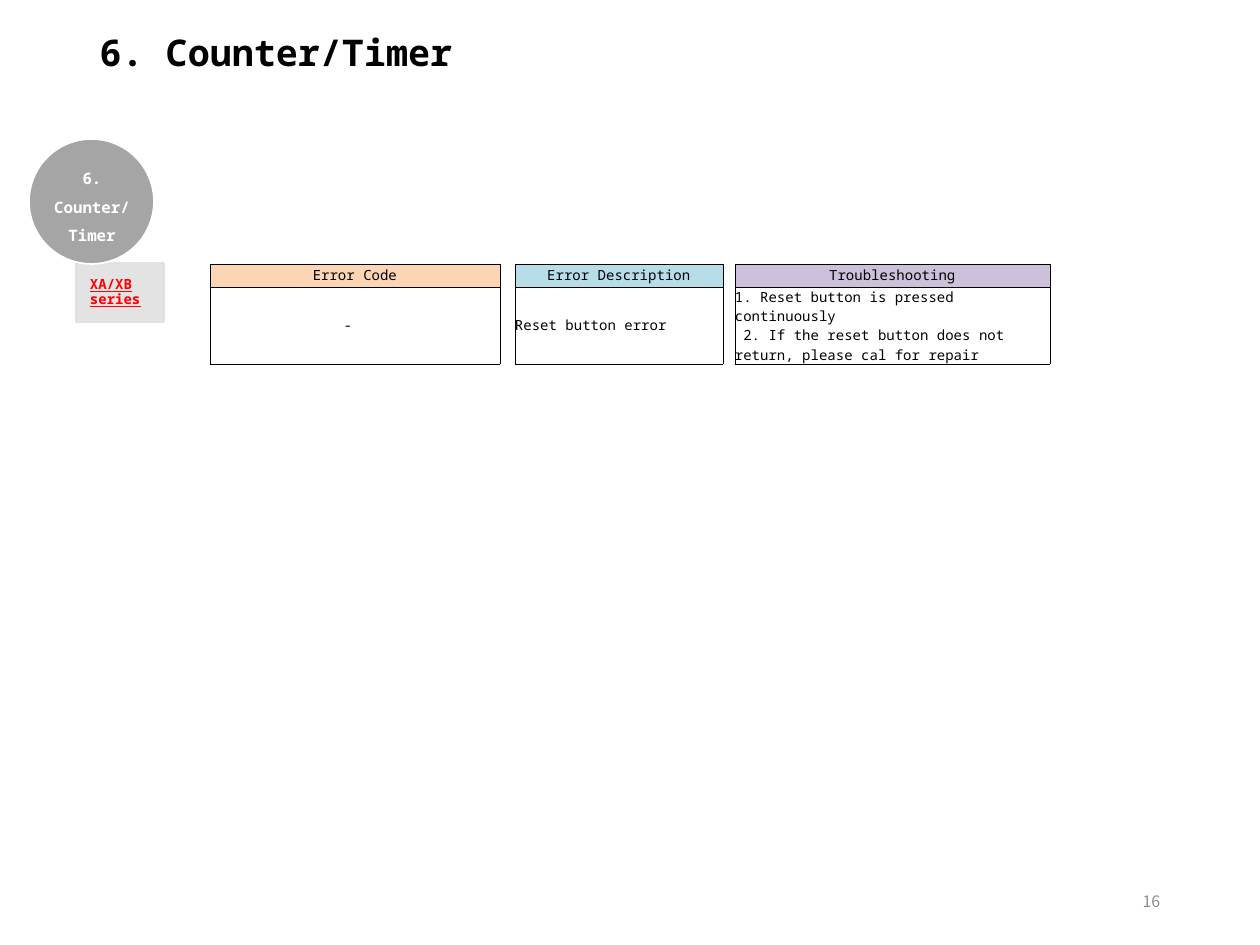
"""Build the Counter/Timer troubleshooting slide."""
import lxml.etree
import pptx
import pptx.dml.color
import pptx.enum.shapes
import pptx.enum.text
import pptx.oxml.ns
import pptx.util

SCALE = 914400 / 126
FONT = "Noto Sans Mono"
ALIGN = pptx.enum.text.PP_ALIGN
MIDDLE = pptx.enum.text.MSO_ANCHOR.MIDDLE
SHAPES = pptx.enum.shapes.MSO_SHAPE
qn = pptx.oxml.ns.qn
COLORS = {
    "black": "000000",
    "white": "FFFFFF",
    "red": "FF0000",
    "panel": "E1E1E1",
    "circle": "A5A5A5",
    "number": "8C8C8C",
    "code": "FCD5B4",
    "description": "B6DDE8",
    "troubleshooting": "CCC0DA",
}


def px(*lengths):
    return [pptx.util.Emu(round(length * SCALE)) for length in lengths]


def write(paragraph, text, size, color, bold=False, align=ALIGN.LEFT, spacing=None, font=FONT):
    paragraph.alignment = align
    paragraph.line_spacing = spacing
    for index, line in enumerate(text.split("\n")):
        if index:
            paragraph.add_line_break()
        run = paragraph.add_run()
        run.text = line
        run.font.name = font
        run.font.size = pptx.util.Pt(size)
        run.font.bold = bold
        run.font.color.rgb = pptx.dml.color.RGBColor.from_string(COLORS[color])
        properties = run.font._element
        lxml.etree.SubElement(properties, qn("a:ea"), typeface=font)
    return run


presentation = pptx.Presentation()
presentation.slide_width, presentation.slide_height = px(1260, 945)
slide = presentation.slides.add_slide(presentation.slide_layouts[5])

title = slide.shapes.title
title.left, title.top, title.width, title.height = px(87, 19, 1086, 72)
title.text_frame.vertical_anchor = MIDDLE
write(title.text_frame.paragraphs[0], "6. Counter/Timer", 21, "black", True, spacing=0.9)

badges = [
    (SHAPES.RECTANGLE, (76, 263, 88, 59), "panel", "panel"),
    (SHAPES.OVAL, (29, 139, 125, 125), "circle", "white"),
]
for preset, bounds, fill, outline in badges:
    shape = slide.shapes.add_shape(preset, *px(*bounds))
    shape.shadow.inherit = False
    shape.fill.solid()
    shape.fill.fore_color.rgb = pptx.dml.color.RGBColor.from_string(COLORS[fill])
    shape.line.color.rgb = pptx.dml.color.RGBColor.from_string(COLORS[outline])
    shape.line.width = pptx.util.Pt(1)
    if fill == "panel":
        for color in shape._element.spPr.iter(qn("a:srgbClr")):
            lxml.etree.SubElement(color, qn("a:alpha"), val="90000")

labels = [
    ((90, 263, 74, 59), (0, 8, 8, 8), "XA/XB series", 8, "red", True, ALIGN.LEFT, 0.9, FONT),
    ((48, 158, 88, 88), (0, 0, 0, 0), "6. Counter/ Timer", 9, "white", True, ALIGN.CENTER, 1.5, FONT),
    ((890, 876, 283, 50), (13, 6, 13, 6), "16", 9, "number", False, ALIGN.RIGHT, None, "Noto Sans CJK KR"),
]
for bounds, insets, *content in labels:
    frame = slide.shapes.add_textbox(*px(*bounds)).text_frame
    frame.word_wrap = True
    frame.vertical_anchor = MIDDLE
    frame.margin_left, frame.margin_top, frame.margin_right, frame.margin_bottom = px(*insets)
    run = write(frame.paragraphs[0], *content)
    run.font.underline = True if content[2] == "red" else None

column_widths = [290, 15, 208, 12, 315]
row_heights = [23, 77]
rows = [
    ["Error Code", "", "Error Description", "", "Troubleshooting"],
    [
        "-　",
        "",
        "Reset button error",
        "",
        "1. Reset button is pressed continuously\n"
        " 2. If the reset button does not return, please cal for repair",
    ],
]
header_fills = ["code", "white", "description", "white", "troubleshooting"]

table = slide.shapes.add_table(
    2, 5, *px(210, 264, sum(column_widths), sum(row_heights))
).table
for column, width in zip(table.columns, px(*column_widths)):
    column.width = width
for row, height in zip(table.rows, px(*row_heights)):
    row.height = height

for row_index, texts in enumerate(rows):
    for column_index, text in enumerate(texts):
        cell = table.cell(row_index, column_index)
        cell.margin_left = cell.margin_top = cell.margin_right = cell.margin_bottom = 0
        cell.vertical_anchor = MIDDLE
        paragraph = cell.text_frame.paragraphs[0]
        if text:
            centered = row_index == 0 or column_index == 0
            write(paragraph, text, 8, "black", align=ALIGN.CENTER if centered else ALIGN.LEFT)
        else:
            lxml.etree.SubElement(paragraph._p, qn("a:endParaRPr"), sz="800")
        properties = cell._tc.get_or_add_tcPr()
        for side in ("L", "R", "T", "B"):
            border = lxml.etree.SubElement(properties, qn(f"a:ln{side}"), w="6350")
            if text or side in "LR":
                fill = lxml.etree.SubElement(border, qn("a:solidFill"))
                lxml.etree.SubElement(fill, qn("a:srgbClr"), val=COLORS["black"])
            else:
                lxml.etree.SubElement(border, qn("a:noFill"))
        if row_index == 0:
            cell.fill.solid()
            cell.fill.fore_color.rgb = pptx.dml.color.RGBColor.from_string(
                COLORS[header_fills[column_index]]
            )
        else:
            cell.fill.background()

presentation.save("out.pptx")
